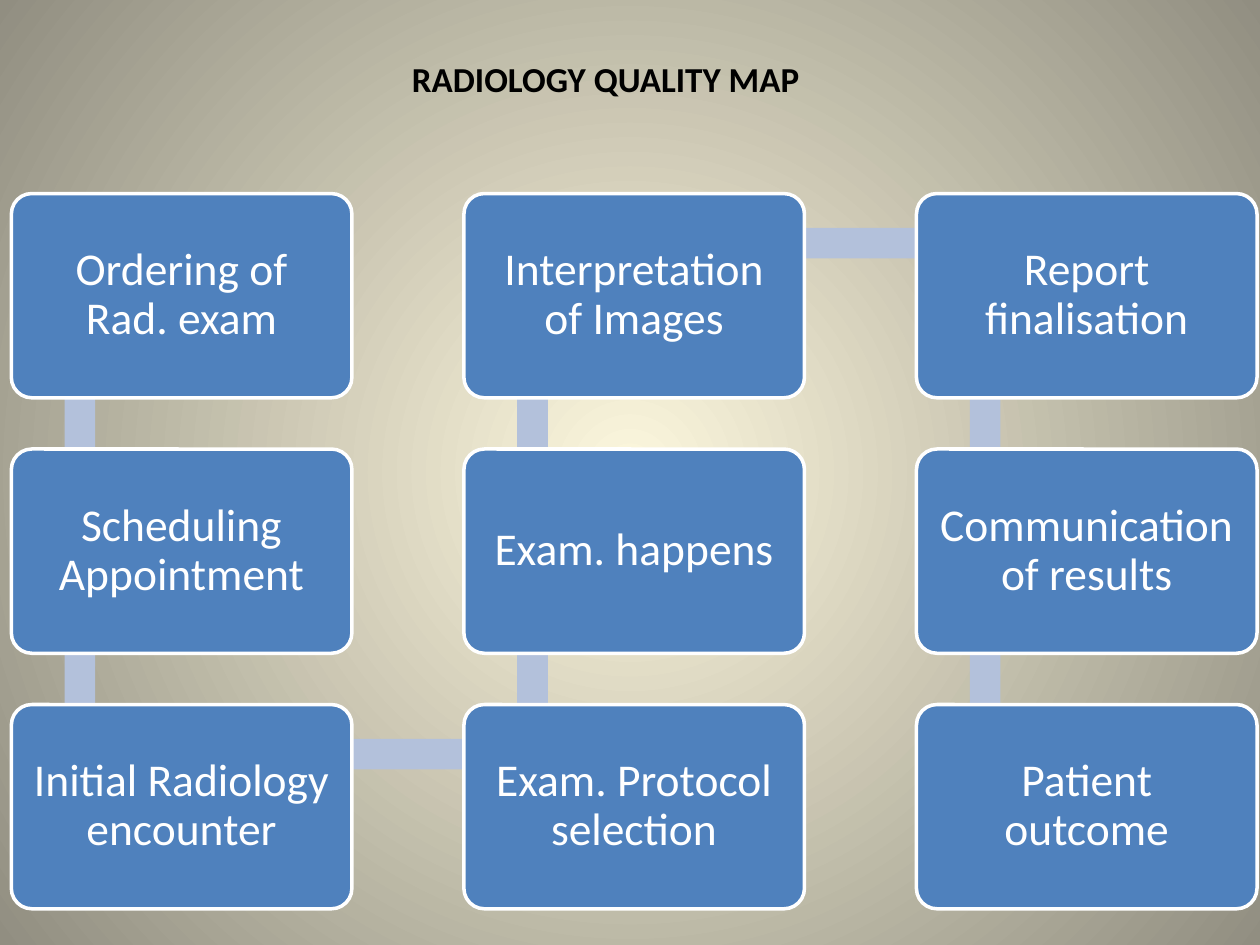
from dataclasses import dataclass

import lxml.etree
import pptx
import pptx.dml.color
import pptx.enum.shapes
import pptx.enum.text
import pptx.oxml.ns
import pptx.util


@dataclass(frozen=True)
class Theme:
    font: str = "Calibri"
    title_size: float = 20
    step_size: float = 26
    title_color: str = "000000"
    step_text: str = "FFFFFF"
    step_fill: str = "4F81BD"
    step_line: str = "FFFFFF"
    link_fill: str = "B3C1DB"
    glow_center: str = "FCF7DD"
    glow_edge: str = "918E81"


@dataclass(frozen=True)
class Step:
    text: str
    column: int
    row: int

    @property
    def left(self) -> float:
        return GRID_LEFT + self.column * COLUMN_PITCH

    @property
    def top(self) -> float:
        return GRID_TOP + self.row * ROW_PITCH

    @property
    def anchor(self) -> tuple[float, float]:
        return self.left + ANCHOR_X, self.top + ANCHOR_Y


THEME = Theme()
GRID_LEFT, GRID_TOP = 6.5, 110.6
COLUMN_PITCH, ROW_PITCH = 258.6, 146
STEP_WIDTH, STEP_HEIGHT = 194.6, 116.7
ANCHOR_X, ANCHOR_Y = 39.2, 28.4
LINK_THICKNESS = 17.5

STEPS = [
    Step("Ordering of Rad. exam", 0, 0),
    Step("Scheduling Appointment", 0, 1),
    Step("Initial Radiology encounter", 0, 2),
    Step("Exam. Protocol selection", 1, 2),
    Step("Exam. happens", 1, 1),
    Step("Interpretation of Images", 1, 0),
    Step("Report finalisation", 2, 0),
    Step("Communication of results", 2, 1),
    Step("Patient outcome", 2, 2),
]


def rgb(color: str) -> pptx.dml.color.RGBColor:
    return pptx.dml.color.RGBColor.from_string(color)


def format_runs(paragraph, size: float, color: str, bold: bool = False) -> None:
    for run in paragraph.runs:
        run.font.name = THEME.font
        run.font.size = pptx.util.Pt(size)
        run.font.bold = bold
        run.font.color.rgb = rgb(color)


def paint_background(slide) -> None:
    fill = slide.background.fill
    fill.gradient()
    for stop, color in zip(fill.gradient_stops, (THEME.glow_center, THEME.glow_edge)):
        stop.color.rgb = rgb(color)
    qn = pptx.oxml.ns.qn
    gradient = slide.background._cSld.find(".//" + qn("a:gradFill"))
    linear = gradient.find(qn("a:lin"))
    if linear is not None:
        gradient.remove(linear)
    circle = lxml.etree.SubElement(gradient, qn("a:path"), {"path": "circle"})
    center = dict.fromkeys("ltrb", "50000")
    lxml.etree.SubElement(circle, qn("a:fillToRect"), center)


def write_title(slide, text: str) -> None:
    title = slide.shapes.title
    title.left, title.top = pptx.util.Pt(228.2), pptx.util.Pt(29.5)
    title.width, title.height = pptx.util.Pt(240), pptx.util.Pt(31.7)
    text_frame = title.text_frame
    text_frame.text = text
    text_frame.word_wrap = True
    text_frame.auto_size = pptx.enum.text.MSO_AUTO_SIZE.NONE
    text_frame.vertical_anchor = pptx.enum.text.MSO_ANCHOR.TOP
    paragraph = text_frame.paragraphs[0]
    paragraph.alignment = pptx.enum.text.PP_ALIGN.LEFT
    format_runs(paragraph, THEME.title_size, THEME.title_color, bold=True)


def add_block(slide, kind, left: float, top: float, width: float, height: float, color: str):
    shape = slide.shapes.add_shape(kind, *map(pptx.util.Pt, (left, top, width, height)))
    shape.shadow.inherit = False
    shape.fill.solid()
    shape.fill.fore_color.rgb = rgb(color)
    shape.line.fill.background()
    return shape


def draw_link(slide, start: Step, end: Step) -> None:
    (x1, y1), (x2, y2) = start.anchor, end.anchor
    half = LINK_THICKNESS / 2
    if start.column == end.column:
        box = x1 - half, min(y1, y2), LINK_THICKNESS, abs(y2 - y1)
    else:
        box = min(x1, x2), y1 - half, abs(x2 - x1), LINK_THICKNESS
    add_block(slide, pptx.enum.shapes.MSO_SHAPE.RECTANGLE, *box, THEME.link_fill)


def draw_step(slide, step: Step) -> None:
    shape = add_block(slide, pptx.enum.shapes.MSO_SHAPE.ROUNDED_RECTANGLE,
                      step.left, step.top, STEP_WIDTH, STEP_HEIGHT, THEME.step_fill)
    shape.adjustments[0] = 0.1
    shape.line.color.rgb = rgb(THEME.step_line)
    shape.line.width = pptx.util.Pt(2)
    text_frame = shape.text_frame
    text_frame.text = step.text
    text_frame.word_wrap = True
    text_frame.vertical_anchor = pptx.enum.text.MSO_ANCHOR.MIDDLE
    text_frame.margin_left = text_frame.margin_right = pptx.util.Pt(8)
    text_frame.margin_top = text_frame.margin_bottom = pptx.util.Pt(8)
    paragraph = text_frame.paragraphs[0]
    paragraph.alignment = pptx.enum.text.PP_ALIGN.CENTER
    paragraph.line_spacing = 0.9
    format_runs(paragraph, THEME.step_size, THEME.step_text)


def main() -> None:
    presentation = pptx.Presentation()
    presentation.slide_width = pptx.util.Pt(720)
    presentation.slide_height = pptx.util.Pt(540)
    slide = presentation.slides.add_slide(presentation.slide_layouts[5])
    paint_background(slide)
    write_title(slide, "RADIOLOGY QUALITY MAP")
    for start, end in zip(STEPS, STEPS[1:]):
        draw_link(slide, start, end)
    for step in STEPS:
        draw_step(slide, step)
    presentation.save("out.pptx")


if __name__ == "__main__":
    main()
